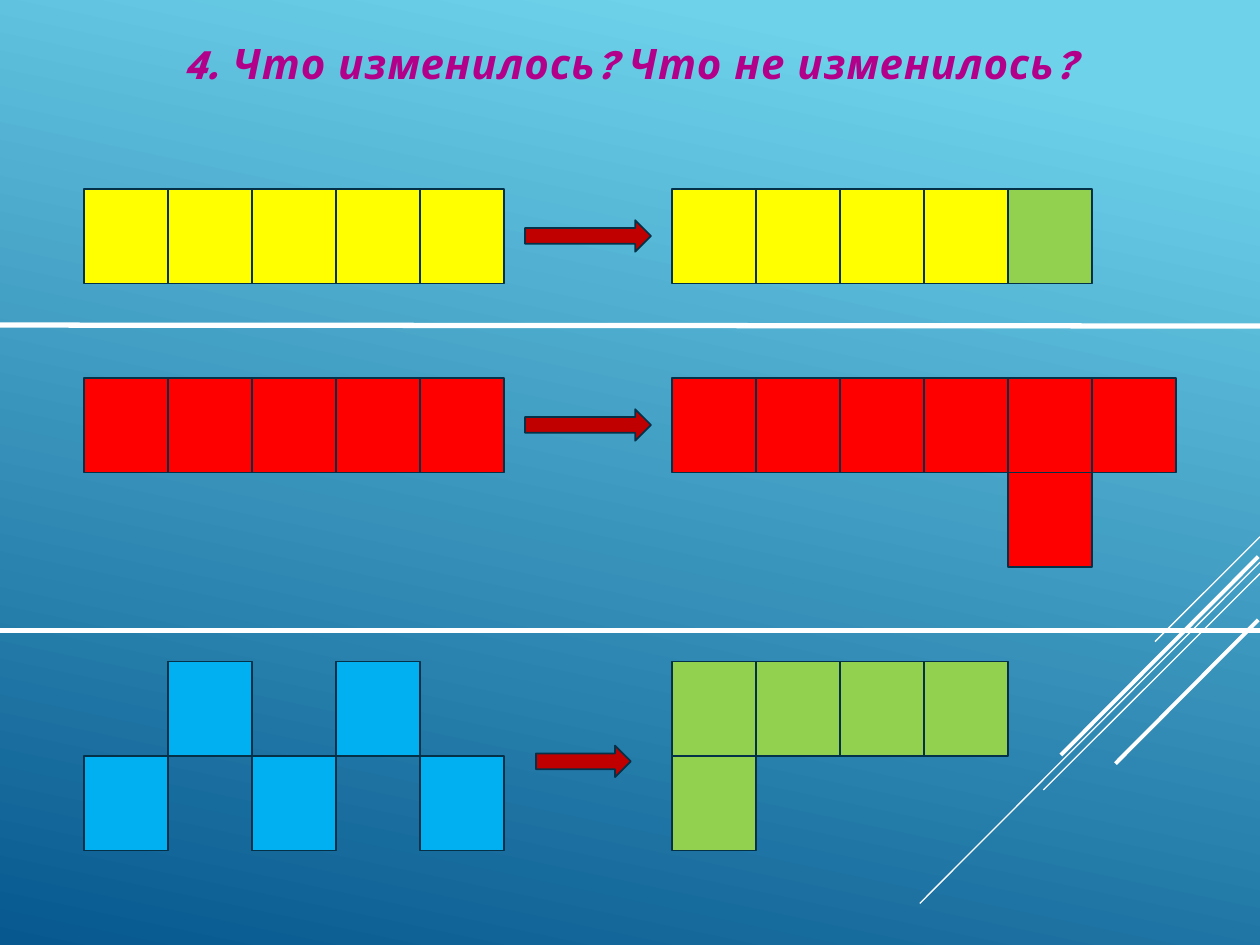
from dataclasses import dataclass

from pptx import Presentation
from pptx.dml.color import RGBColor
from pptx.enum.shapes import MSO_CONNECTOR, MSO_SHAPE
from pptx.enum.text import MSO_AUTO_SIZE, PP_ALIGN
from pptx.oxml.ns import qn
from pptx.util import Inches, Pt
from lxml import etree

STRAIGHT = MSO_CONNECTOR.STRAIGHT
RECTANGLE = MSO_SHAPE.RECTANGLE
RIGHT_ARROW = MSO_SHAPE.RIGHT_ARROW
CENTER = PP_ALIGN.CENTER
GROW = MSO_AUTO_SIZE.SHAPE_TO_FIT_TEXT

WIDTH, HEIGHT = 10, 7.5
COLUMNS, ROWS = 15, 10


@dataclass(frozen=True)
class Theme:
    sky: tuple = ((0.1, "6ED2EB"), (1, "06588E"))
    sky_angle: int = 258
    title: tuple = ((0.25, "B3008A"), (1, "7E0061"))
    title_angle: int = 270
    title_size: int = 24
    font: str = "League Spartan"
    white: str = "FFFFFF"
    outline: str = "043148"
    arrow: str = "C00000"
    yellow: str = "FFFF00"
    green: str = "92D050"
    red: str = "FF0000"
    blue: str = "00B0F0"
    outline_width: float = 1
    thin: float = 0.75
    medium: float = 2.25
    thick: float = 3


def across(columns):
    return Inches(columns * WIDTH / COLUMNS)


def down(rows):
    return Inches(rows * HEIGHT / ROWS)


def paint_gradient(fill, stops, angle):
    fill.gradient()
    fill.gradient_angle = angle
    for stop, (position, color) in zip(fill.gradient_stops, stops):
        stop.position = position
        stop.color.rgb = RGBColor.from_string(color)


def write(para, text, *, font, size, stops, angle, spacing):
    span = para.add_run()
    span.text = text
    span.font.name = font
    span.font.size = Pt(size)
    span.font.bold = span.font.italic = True
    paint_gradient(span.font.fill, stops, angle)
    span.font._element.set("spc", str(spacing))


class Painter:
    """Draws styled elements on a slide, measured in grid columns and rows."""

    def __init__(self, page, theme):
        self.page = page
        self.theme = theme

    def background(self):
        paint_gradient(self.page.background.fill, self.theme.sky, self.theme.sky_angle)

    def title(self, text, left, top, width, height):
        box = self.page.shapes.add_textbox(across(left), down(top), across(width), down(height))
        frame = box.text_frame
        frame.word_wrap = True
        frame.auto_size = GROW
        para = frame.paragraphs[0]
        para.alignment = CENTER
        write(para, text, font=self.theme.font, size=self.theme.title_size,
              stops=self.theme.title, angle=self.theme.title_angle, spacing=50)

    def line(self, start, end, width, shapes=None):
        line = (shapes or self.page.shapes).add_connector(
            STRAIGHT, across(start[0]), down(start[1]), across(end[0]), down(end[1]))
        line.line.color.rgb = RGBColor.from_string(self.theme.white)
        line.line.width = Pt(width)
        etree.SubElement(line._element.spPr, qn("a:effectLst"))

    def rays(self, rays):
        group = self.page.shapes.add_group_shape()
        for start, end, width in rays:
            self.line(start, end, width, group.shapes)

    def shape(self, shapes, kind, left, top, width, height, color):
        shape = shapes.add_shape(kind, across(left), down(top), across(width), down(height))
        shape.shadow.inherit = False
        shape.fill.solid()
        shape.fill.fore_color.rgb = RGBColor.from_string(color)
        shape.line.color.rgb = RGBColor.from_string(self.theme.outline)
        shape.line.width = Pt(self.theme.outline_width)

    def arrow(self, left, top, width):
        self.shape(self.page.shapes, RIGHT_ARROW, left, top, width, 1 / 3, self.theme.arrow)

    def figure(self, left, top, pattern):
        colors = {"Y": self.theme.yellow, "G": self.theme.green,
                  "R": self.theme.red, "B": self.theme.blue}
        group = self.page.shapes.add_group_shape()
        for row, cells in enumerate(pattern):
            for column, key in enumerate(cells):
                if key in colors:
                    self.shape(group.shapes, RECTANGLE, left + column, top + row, 1, 1, colors[key])


def main():
    deck = Presentation()
    deck.slide_width, deck.slide_height = Inches(WIDTH), Inches(HEIGHT)
    theme = Theme()
    painter = Painter(deck.slides.add_slide(deck.slide_layouts[6]), theme)
    painter.background()
    painter.rays([
        ((15, 5.68), (13.75, 6.79), theme.thin),
        ((15, 5.95), (10.95, 9.56), theme.thin),
        ((15, 6.07), (12.42, 8.36), theme.thin),
        ((14.98, 5.89), (12.63, 7.99), theme.medium),
        ((14.98, 6.56), (13.28, 8.08), theme.medium),
    ])
    painter.title("4. Что изменилось? Что не изменилось?", 0, 1 / 3, COLUMNS, 2 / 3)

    for left, top, width in [(6.25, 2.33, 1.5), (6.25, 4.33, 1.5), (6.38, 7.89, 1.13)]:
        painter.arrow(left, top, width)

    for top, before, after in [
        (2, ["YYYYY"], ["YYYYG"]),
        (4, ["RRRRR"], ["RRRRRR", "....R"]),
        (7, [".B.B.", "B.B.B"], ["GGGG", "G"]),
    ]:
        painter.figure(1, top, before)
        painter.figure(8, top, after)

    for right_end, left_end in [(6.67, 6.67), (3.45, 3.44)]:
        painter.line((COLUMNS, right_end), (0, left_end), theme.thick)
    deck.save("out.pptx")


if __name__ == "__main__":
    main()
